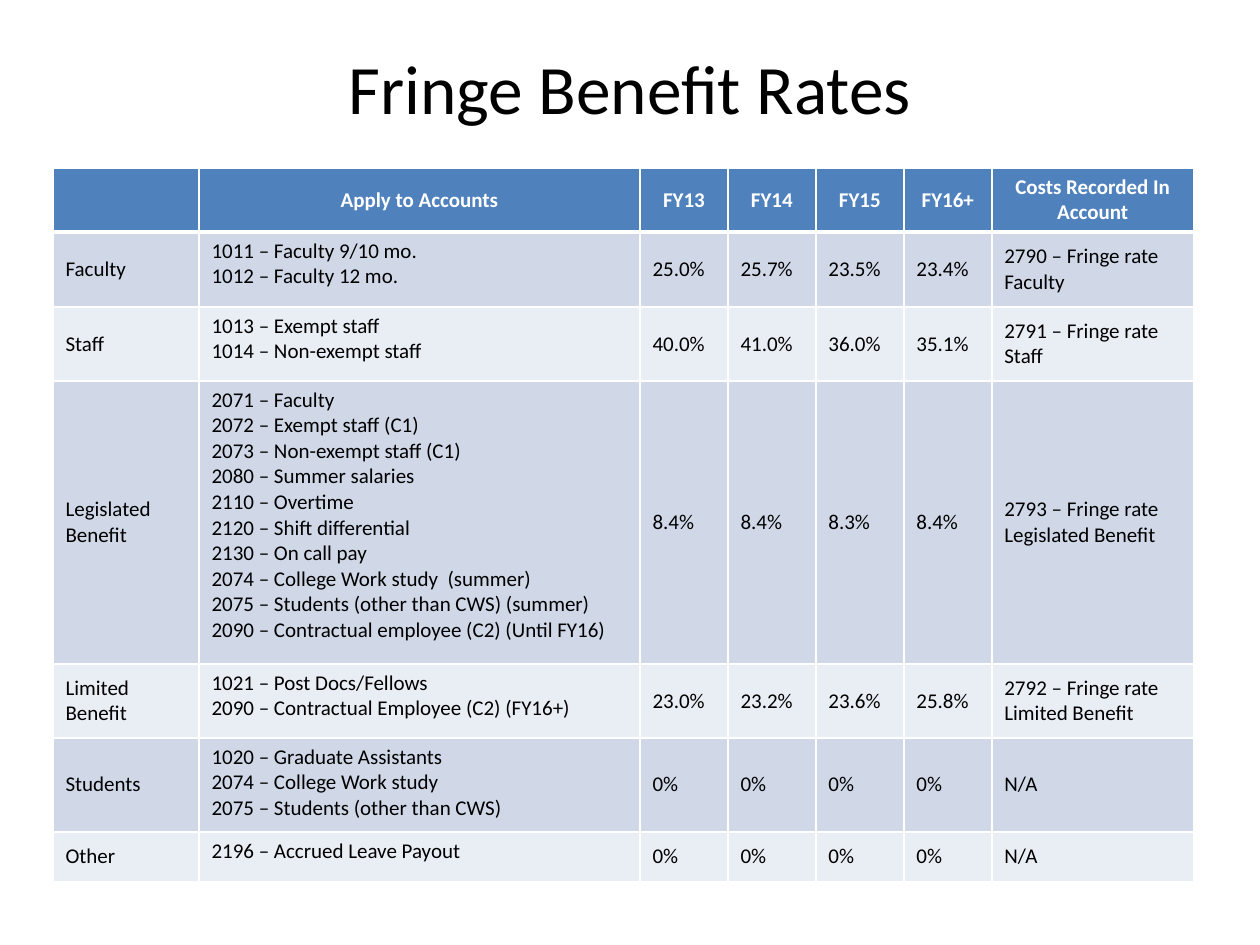
"""Build the fringe benefit rates slide."""
from dataclasses import dataclass

from lxml import etree
from pptx import Presentation
from pptx.dml.color import RGBColor
from pptx.enum.text import MSO_ANCHOR, PP_ALIGN
from pptx.oxml.ns import qn
from pptx.util import Emu, Pt

TOP, MIDDLE = MSO_ANCHOR.TOP, MSO_ANCHOR.MIDDLE
LEFT, CENTER = PP_ALIGN.LEFT, PP_ALIGN.CENTER
SCALE = 914400 / 126


@dataclass(frozen=True)
class Theme:
    """Hold the colours and type sizes."""
    font: str = "Calibri"
    title: float = 39.6
    body: float = 12
    ink: str = "000000"
    paper: str = "FFFFFF"
    head: str = "4F81BD"
    bands: tuple[str, str] = ("D0D8E8", "E9EDF4")
    thin: int = 1
    thick: int = 3


@dataclass(frozen=True)
class Group:
    """Hold one row of rates."""
    name: str
    codes: tuple[str, ...]
    rates: tuple[str, ...]
    cost: str
    height: int


THEME = Theme()
WIDTHS = (146, 441, 88, 88, 88, 88, 202)
HEADS = ("", "Apply to Accounts", "FY13", "FY14", "FY15", "FY16+",
         "Costs Recorded In Account")
HEAD_TALL = 64
GROUPS = (
    Group("Faculty", ("1011 – Faculty 9/10 mo.", "1012 – Faculty 12 mo."),
          ("25.0%", "25.7%", "23.5%", "23.4%"), "2790 – Fringe rate Faculty", 75),
    Group("Staff", ("1013 – Exempt staff", "1014 – Non-exempt staff"),
          ("40.0%", "41.0%", "36.0%", "35.1%"), "2791 – Fringe rate Staff", 74),
    Group("Legislated Benefit",
          ("2071 – Faculty", "2072 – Exempt staff (C1)",
           "2073 – Non-exempt staff (C1)", "2080 – Summer salaries",
           "2110 – Overtime", "2120 – Shift differential",
           "2130 – On call pay", "2074 – College Work study  (summer)",
           "2075 – Students (other than CWS) (summer)",
           "2090 – Contractual employee (C2) (Until FY16)"),
          ("8.4%", "8.4%", "8.3%", "8.4%"),
          "2793 – Fringe rate Legislated Benefit", 283),
    Group("Limited Benefit",
          ("1021 – Post Docs/Fellows", "2090 – Contractual Employee (C2) (FY16+)"),
          ("23.0%", "23.2%", "23.6%", "25.8%"),
          "2792 – Fringe rate Limited Benefit", 74),
    Group("Students",
          ("1020 – Graduate Assistants", "2074 – College Work study",
           "2075 – Students (other than CWS)"), ("0%",) * 4, "N/A", 94),
    Group("Other", ("2196 – Accrued Leave Payout",), ("0%",) * 4, "N/A", 50),
)


def px(count: int) -> Emu:
    """Turn pixels into EMU."""
    return Emu(round(count * SCALE))


def write(frame, text: str, size: float, color: str, align, bold: bool = False) -> None:
    """Fill a text frame with evenly styled paragraphs."""
    frame.text = text
    for para in frame.paragraphs:
        para.alignment = align
        font = para.font
        font.name, font.size, font.bold = THEME.font, Pt(size), bold
        font.color.rgb = RGBColor.from_string(color)


def edge(cell, side: str, width: int) -> None:
    """Draw one border of a cell."""
    props = cell._tc.get_or_add_tcPr()
    line = etree.SubElement(props, qn(f"a:ln{side}"), w=str(Pt(width)))
    fill = etree.SubElement(line, qn("a:solidFill"))
    etree.SubElement(fill, qn("a:srgbClr"), val=THEME.paper)


def paint(cell, row: int, col: int, text: str) -> None:
    """Style and fill one table cell."""
    head = row == 0
    for side in "LRTB":
        thick = (row, side) in ((0, "B"), (1, "T"))
        edge(cell, side, THEME.thick if thick else THEME.thin)
    cell.fill.solid()
    shade = THEME.head if head else THEME.bands[(row - 1) % 2]
    cell.fill.fore_color.rgb = RGBColor.from_string(shade)
    cell.vertical_anchor = TOP if col == 1 and not head else MIDDLE
    write(cell.text_frame, text, THEME.body, THEME.paper if head else THEME.ink,
          CENTER if head else LEFT, head)


def add_title(slide) -> None:
    """Add the slide title."""
    box = slide.shapes.add_textbox(px(63), px(38), px(1134), px(98))
    frame = box.text_frame
    frame.word_wrap = True
    frame.vertical_anchor = MIDDLE
    write(frame, "Fringe Benefit Rates", THEME.title, THEME.ink, CENTER)


def add_rates(slide) -> None:
    """Add the table of rates."""
    rows = [HEADS] + [(g.name, "\n".join(g.codes), *g.rates, g.cost) for g in GROUPS]
    tall = [HEAD_TALL] + [g.height for g in GROUPS]
    table = slide.shapes.add_table(len(rows), len(WIDTHS), px(53), px(168),
                                   px(sum(WIDTHS)), px(sum(tall))).table
    for col, width in zip(table.columns, WIDTHS):
        col.width = px(width)
    for row, height in zip(table.rows, tall):
        row.height = px(height)
    for r, texts in enumerate(rows):
        for c, text in enumerate(texts):
            paint(table.cell(r, c), r, c, text)


def main() -> None:
    """Build and save the deck."""
    deck = Presentation()
    deck.slide_width, deck.slide_height = px(1260), px(945)
    slide = deck.slides.add_slide(deck.slide_layouts[6])
    add_title(slide)
    add_rates(slide)
    deck.save("out.pptx")


if __name__ == "__main__":
    main()
